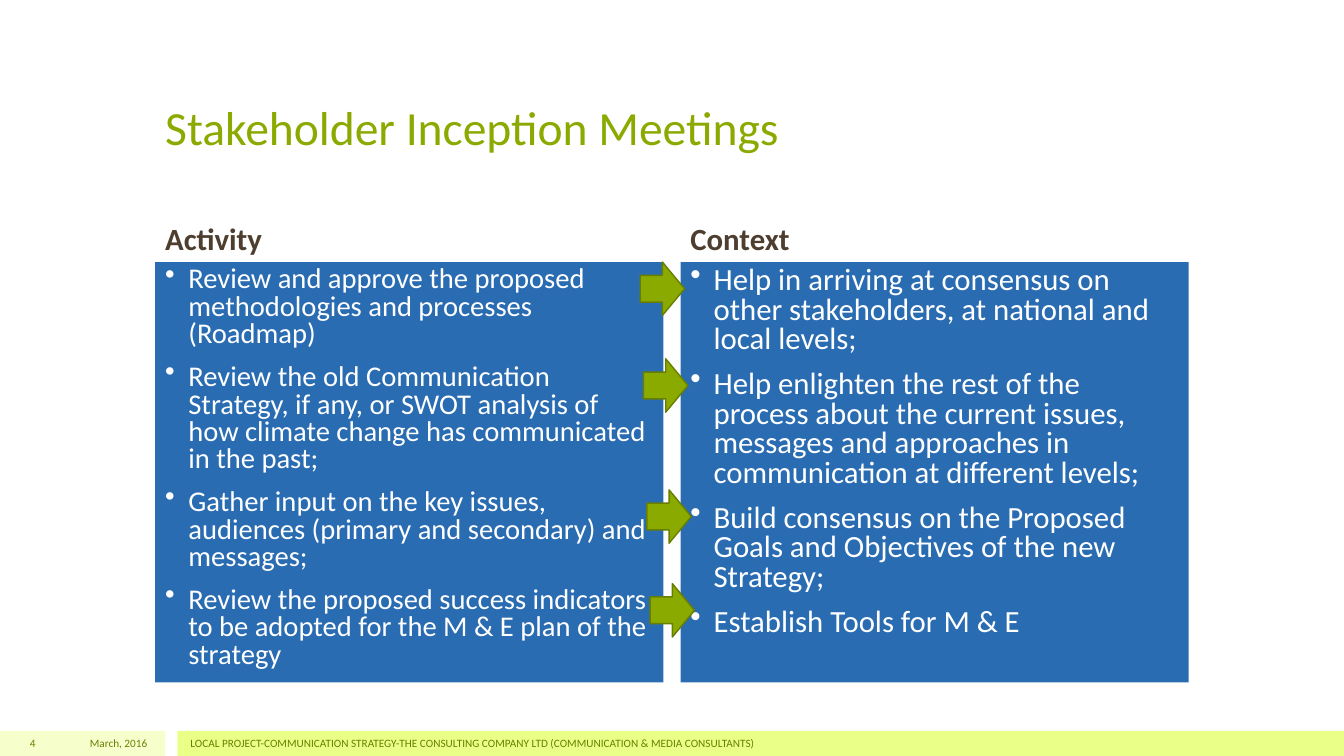
"""Build the stakeholder inception meetings slide."""

from dataclasses import dataclass

import lxml.etree
import pptx
import pptx.dml.color
import pptx.enum.shapes
import pptx.enum.text
import pptx.oxml.ns
import pptx.shapes.autoshape
import pptx.slide
import pptx.util

Inches = pptx.util.Inches
Align = pptx.enum.text.PP_ALIGN
Anchor = pptx.enum.text.MSO_ANCHOR
Preset = pptx.enum.shapes.MSO_SHAPE


@dataclass(frozen=True)
class Theme:
    font: str = "Calibri"
    green: str = "8BAA00"
    green_line: str = "677E00"
    footer_text: str = "688000"
    footer_pale: str = "F6FFCC"
    footer_lime: str = "E9FF88"
    brown: str = "4D3E2F"
    blue: str = "2A6CB2"
    white: str = "FFFFFF"
    title_size: float = 34
    heading_size: float = 22
    footer_size: float = 8


@dataclass(frozen=True)
class Frame:
    left: float
    top: float
    width: float
    height: float

    def lengths(self) -> tuple[pptx.util.Length, ...]:
        return tuple(Inches(n) for n in (self.left, self.top, self.width, self.height))


@dataclass(frozen=True)
class Style:
    size: float
    color: str
    bold: bool = False
    align: Align = Align.LEFT
    anchor: Anchor = Anchor.TOP
    line_spacing: float = 1.0
    space_before: float = 0
    bullet: bool = False


@dataclass(frozen=True)
class Label:
    frame: Frame
    text: str
    style: Style


@dataclass(frozen=True)
class Column:
    left: float
    heading: str
    size: float
    items: tuple[str, ...]


THEME = Theme()
TITLE = Style(THEME.title_size, THEME.green, anchor=Anchor.BOTTOM)
HEADING = Style(THEME.heading_size, THEME.brown, bold=True, anchor=Anchor.BOTTOM, line_spacing=0.9)
FOOTER = Style(THEME.footer_size, THEME.footer_text, anchor=Anchor.MIDDLE)
FOOTER_RIGHT = Style(THEME.footer_size, THEME.footer_text, align=Align.RIGHT, anchor=Anchor.MIDDLE)

COLUMN_WIDTH = 5.04
PANEL_TOP = 2.6
FOOTER_TOP = 7.25
FOOTER_HEIGHT = 0.25
ARROW_LEFT = 6.35
ARROW_SHIFT = 0.033
ARROW_TOPS = (2.6, 3.56, 4.86, 5.79)


def footer_frame(left: float, width: float) -> Frame:
    return Frame(left, FOOTER_TOP, width, FOOTER_HEIGHT)


BANDS = (
    (footer_frame(0, 1.64), THEME.footer_pale),
    (footer_frame(1.76, 11.57), THEME.footer_lime),
)
LABELS = (
    Label(Frame(1.54, 0.3, 10.25, 1.29), "Stakeholder Inception Meetings", TITLE),
    Label(footer_frame(0.47, 1.09), "March, 2016", FOOTER_RIGHT),
    Label(
        footer_frame(1.79, 10),
        "LOCAL PROJECT-COMMUNICATION STRATEGY-THE CONSULTING COMPANY LTD "
        "(COMMUNICATION & MEDIA CONSULTANTS)",
        FOOTER,
    ),
    Label(footer_frame(0, 0.45), "4", FOOTER_RIGHT),
)
COLUMNS = (
    Column(1.54, "Activity", 20.4, (
        "Review and approve the proposed methodologies and processes (Roadmap)",
        "Review the old Communication Strategy, if any, or SWOT analysis of how "
        "climate change has communicated in the past;",
        "Gather input on the key issues, audiences (primary and secondary) and messages;",
        "Review the proposed success indicators to be adopted for the M & E plan of the strategy",
    )),
    Column(6.75, "Context", 22, (
        "Help in arriving at consensus on other stakeholders, at national and local levels;",
        "Help enlighten the rest of the process about the current issues, messages and "
        "approaches in communication at different levels;",
        "Build consensus on the Proposed Goals and Objectives of the new Strategy;",
        "Establish Tools for M & E",
    )),
)


def rgb(color: str) -> pptx.dml.color.RGBColor:
    return pptx.dml.color.RGBColor.from_string(color)


def write(box: pptx.shapes.autoshape.Shape, texts: tuple[str, ...], style: Style) -> None:
    frame = box.text_frame
    frame.word_wrap = True
    frame.vertical_anchor = style.anchor
    for index, text in enumerate(texts):
        para = frame.add_paragraph() if index else frame.paragraphs[0]
        para.alignment = style.align
        para.line_spacing = style.line_spacing
        para.space_before = pptx.util.Pt(style.space_before)
        if style.bullet:
            properties = para._p.get_or_add_pPr()
            properties.set("marL", str(Inches(0.23)))
            properties.set("indent", str(-Inches(0.23)))
            bullet = lxml.etree.SubElement(properties, pptx.oxml.ns.qn("a:buChar"))
            bullet.set("char", "•")
        span = para.add_run()
        span.text = text
        span.font.name = THEME.font
        span.font.size = pptx.util.Pt(style.size)
        span.font.bold = style.bold
        span.font.color.rgb = rgb(style.color)


def add_label(page: pptx.slide.Slide, label: Label) -> None:
    box = page.shapes.add_textbox(*label.frame.lengths())
    write(box, (label.text,), label.style)


def add_block(
    page: pptx.slide.Slide, preset: Preset, frame: Frame, fill: str, line: str | None = None
) -> pptx.shapes.autoshape.Shape:
    box = page.shapes.add_shape(preset, *frame.lengths())
    box.shadow.inherit = False
    box.fill.solid()
    box.fill.fore_color.rgb = rgb(fill)
    if line:
        box.line.color.rgb = rgb(line)
        box.line.width = pptx.util.Pt(1)
    else:
        box.line.fill.background()
    return box


def add_column(page: pptx.slide.Slide, column: Column) -> None:
    add_label(page, Label(Frame(column.left, 1.7, COLUMN_WIDTH, 0.9), column.heading, HEADING))
    frame = Frame(column.left, PANEL_TOP, COLUMN_WIDTH, 4.17)
    panel = add_block(page, Preset.RECTANGLE, frame, THEME.blue)
    style = Style(column.size, THEME.white, line_spacing=0.8, space_before=11, bullet=True)
    write(panel, column.items, style)


def main() -> None:
    deck = pptx.Presentation()
    deck.slide_width = Inches(13.33)
    deck.slide_height = Inches(7.5)
    page = deck.slides.add_slide(deck.slide_layouts[6])
    for frame, fill in BANDS:
        add_block(page, Preset.RECTANGLE, frame, fill)
    for label in LABELS:
        add_label(page, label)
    for column in COLUMNS:
        add_column(page, column)
    for index, top in enumerate(ARROW_TOPS):
        frame = Frame(ARROW_LEFT + index * ARROW_SHIFT, top, 0.44, 0.53)
        add_block(page, Preset.RIGHT_ARROW, frame, THEME.green, THEME.green_line)
    deck.save("out.pptx")


if __name__ == "__main__":
    main()
